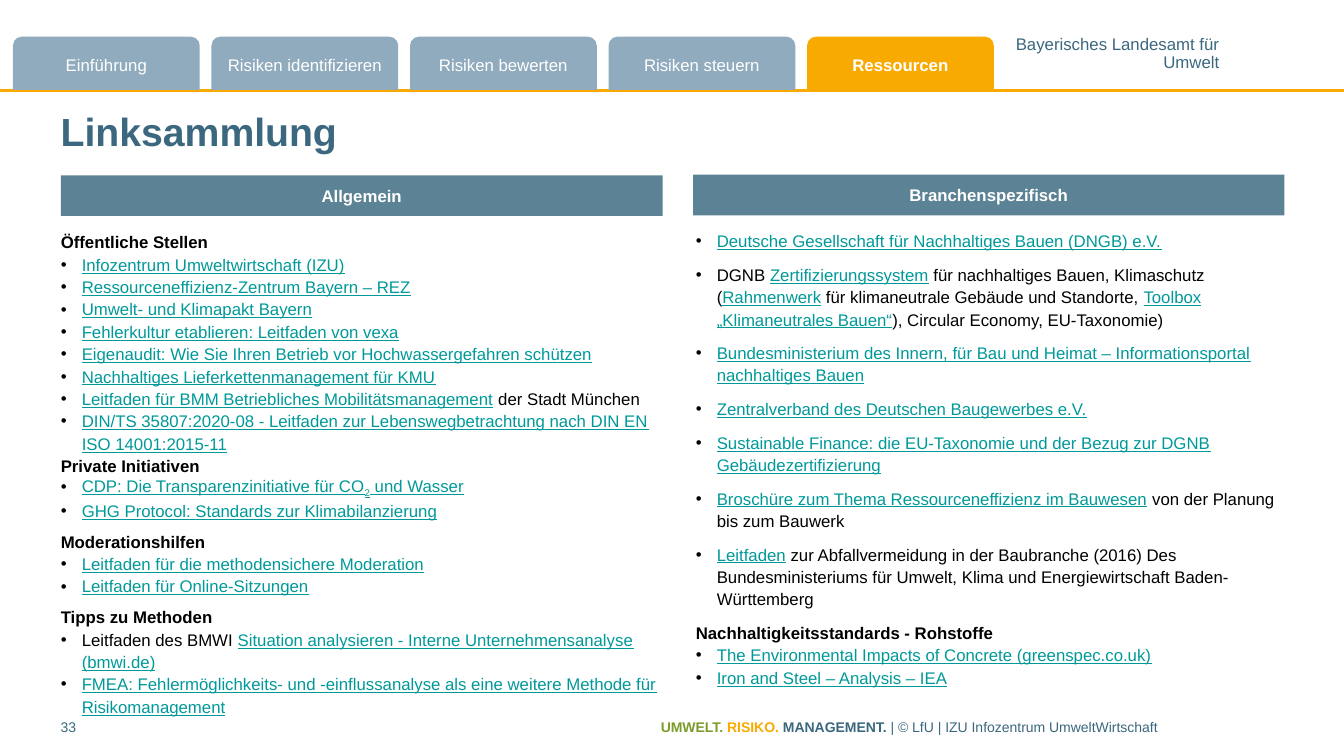
from lxml.etree import SubElement
from pptx import Presentation
from pptx.dml.color import RGBColor
from pptx.enum.shapes import MSO_CONNECTOR, MSO_SHAPE
from pptx.enum.text import MSO_ANCHOR, PP_ALIGN
from pptx.oxml.ns import qn
from pptx.util import Pt

NAVY, STEEL, MIST, AMBER = "3B687F", "5C8395", "90ABBE", "F9AA00"
TEAL, GREEN, BLACK, WHITE = "009999", "7B9C2A", "000000", "FFFFFF"


def color(hex_code):
    return RGBColor.from_string(hex_code)


def head(text, before=0):
    return "head", before, [(text, "bold")]


def item(*runs, before=0):
    """Bulleted entry; a bare string is a link, a tuple names its own style."""
    return "item", before, [(r, "link") if isinstance(r, str) else r for r in runs]


def plain(text):
    return text, "plain"


class Slide:
    font_name = "Arial"
    body_size = 12
    line_height = 16
    indent = 15

    def __init__(self, presentation):
        self.slide = presentation.slides.add_slide(presentation.slide_layouts[6])

    def style(self, run, size, hex_code, bold=False):
        run.font.name = self.font_name
        run.font.size = Pt(size)
        run.font.bold = bold
        run.font.color.rgb = color(hex_code)

    def rule(self, y, width, hex_code, weight):
        line = self.slide.shapes.add_connector(
            MSO_CONNECTOR.STRAIGHT, 0, Pt(y), Pt(width), Pt(y))
        line.line.color.rgb = color(hex_code)
        line.line.width = Pt(weight)
        SubElement(line._element.spPr, qn("a:effectLst"))

    def insets(self, frame, horizontal, vertical):
        frame.margin_left = frame.margin_right = Pt(horizontal)
        frame.margin_top = frame.margin_bottom = Pt(vertical)

    def panel(self, kind, box, fill, label, anchor, inset, bold):
        """Filled shape with a centred white label."""
        shape = self.slide.shapes.add_shape(kind, *map(Pt, box))
        shape.shadow.inherit = False
        shape.fill.solid()
        shape.fill.fore_color.rgb = color(fill)
        shape.line.fill.background()
        frame = shape.text_frame
        self.insets(frame, *inset)
        frame.word_wrap = True
        frame.vertical_anchor = anchor
        frame.text = label
        paragraph = frame.paragraphs[0]
        paragraph.alignment = PP_ALIGN.CENTER
        self.style(paragraph.runs[0], self.body_size, WHITE, bold)

    def frame(self, box, vertical_inset=3.6, wrap=True):
        frame = self.slide.shapes.add_textbox(*map(Pt, box)).text_frame
        self.insets(frame, 0, vertical_inset)
        frame.word_wrap = wrap
        return frame

    def line(self, box, size, *parts, anchor=MSO_ANCHOR.TOP):
        """One line of text from (text, colour, bold) parts."""
        frame = self.frame(box)
        frame.vertical_anchor = anchor
        for text, hex_code, bold in parts:
            run = frame.paragraphs[0].add_run()
            run.text = text
            self.style(run, size, hex_code, bold)

    def sender(self, box, text):
        frame = self.frame(box, 0, wrap=False)
        frame.text = text
        for paragraph in frame.paragraphs:
            paragraph.alignment = PP_ALIGN.RIGHT
            paragraph.line_spacing = 0.85
            self.style(paragraph.runs[0], self.body_size, NAVY)

    def bullet(self, paragraph):
        props = paragraph._p.get_or_add_pPr()
        props.set("marL", str(Pt(self.indent)))
        props.set("indent", str(-Pt(self.indent)))
        bullet_color = SubElement(props, qn("a:buClr"))
        SubElement(bullet_color, qn("a:srgbClr")).set("val", BLACK)
        SubElement(props, qn("a:buFont")).set("typeface", self.font_name)
        SubElement(props, qn("a:buChar")).set("char", "•")

    def link_list(self, box, entries):
        frame = self.frame(box)
        for index, (kind, before, runs) in enumerate(entries):
            paragraph = frame.add_paragraph() if index else frame.paragraphs[0]
            if kind == "item":
                self.bullet(paragraph)
            paragraph.line_spacing = Pt(self.line_height)
            paragraph.space_before = Pt(before)
            for text, look in runs:
                run = paragraph.add_run()
                run.text = text
                is_link = look in ("link", "subscript")
                self.style(run, self.body_size, TEAL if is_link else BLACK, look == "bold")
                run.font.underline = is_link
                if look == "subscript":
                    run._r.get_or_add_rPr().set("baseline", "-25000")


CHAPTERS = ["Einführung", "Risiken identifizieren", "Risiken bewerten",
            "Risiken steuern", "Ressourcen"]
CURRENT_CHAPTER = "Ressourcen"

GENERAL_LINKS = [
    head("Öffentliche Stellen"),
    item("Infozentrum Umweltwirtschaft (IZU)"),
    item("Ressourceneffizienz-Zentrum Bayern – REZ"),
    item("Umwelt- und Klimapakt Bayern"),
    item("Fehlerkultur etablieren: Leitfaden von vexa"),
    item("Eigenaudit: Wie Sie Ihren Betrieb vor Hochwassergefahren schützen"),
    item("Nachhaltiges Lieferkettenmanagement für KMU"),
    item("Leitfaden für BMM Betriebliches Mobilitätsmanagement",
         plain(" der Stadt München")),
    item("DIN/TS 35807:2020-08 - Leitfaden zur Lebenswegbetrachtung nach "
         "DIN EN ISO 14001:2015-11"),
    head("Private Initiativen"),
    item("CDP: Die Transparenzinitiative für CO", ("2", "subscript"), " und Wasser"),
    item("GHG Protocol: Standards zur Klimabilanzierung"),
    head("Moderationshilfen", before=6),
    item("Leitfaden für die methodensichere Moderation"),
    item("Leitfaden für Online-Sitzungen"),
    head("Tipps zu Methoden", before=6),
    item(plain("Leitfaden des BMWI "),
         "Situation analysieren - Interne Unternehmensanalyse (bmwi.de)"),
    item("FMEA: Fehlermöglichkeits- und -einflussanalyse als eine weitere "
         "Methode für Risikomanagement"),
]

SECTOR_LINKS = [
    item("Deutsche Gesellschaft für Nachhaltiges Bauen (DNGB) e.V."),
    item(plain("DGNB "), "Zertifizierungssystem",
         plain(" für nachhaltiges Bauen, Klimaschutz ("), "Rahmenwerk",
         plain(" für klimaneutrale Gebäude und Standorte, "),
         "Toolbox „Klimaneutrales Bauen“",
         plain("), Circular Economy, EU-Taxonomie)"), before=8),
    item("Bundesministerium des Innern, für Bau und Heimat – "
         "Informationsportal nachhaltiges Bauen", before=8),
    item("Zentralverband des Deutschen Baugewerbes e.V.", before=8),
    item("Sustainable Finance: die EU-Taxonomie und der Bezug zur DGNB "
         "Gebäudezertifizierung", before=8),
    item("Broschüre zum Thema Ressourceneffizienz im Bauwesen",
         plain(" von der Planung bis zum Bauwerk"), before=8),
    item("Leitfaden",
         plain(" zur Abfallvermeidung in der Baubranche (2016) Des Bundesministeriums "
               "für Umwelt, Klima und Energiewirtschaft Baden-Württemberg"), before=8),
    head("Nachhaltigkeitsstandards - Rohstoffe", before=8),
    item("The Environmental Impacts of Concrete (greenspec.co.uk)"),
    item("Iron and Steel – Analysis – IEA"),
]


def main():
    presentation = Presentation()
    presentation.slide_width, presentation.slide_height = Pt(960), Pt(540)
    page = Slide(presentation)

    page.rule(64.6, 960, AMBER, 2)
    page.sender((725, 26.6, 146, 24.5), "Bayerisches Landesamt für\nUmwelt")
    for index, chapter in enumerate(CHAPTERS):
        current = chapter == CURRENT_CHAPTER
        page.panel(MSO_SHAPE.ROUND_2_SAME_RECTANGLE,
                   (9.3 + 141.8 * index, 26.2, 133.4, 38),
                   AMBER if current else MIST, chapter,
                   MSO_ANCHOR.MIDDLE, (2.9, 3.6), current)

    page.line((43.4, 73.4, 886, 39.6), 28, ("Linksammlung", NAVY, True),
              anchor=MSO_ANCHOR.MIDDLE)
    for label, box in [("Allgemein", (43.4, 125.2, 430, 29)),
                       ("Branchenspezifisch", (495, 124.8, 422.5, 29))]:
        page.panel(MSO_SHAPE.RECTANGLE, box, STEEL, label,
                   MSO_ANCHOR.TOP, (7.2, 7.2), True)
    page.link_list((43.4, 160.6, 428.4, 344), GENERAL_LINKS)
    page.link_list((497, 159.8, 418.3, 337), SECTOR_LINKS)

    page.line((43.4, 509.8, 50, 22.3), 10, ("33", NAVY, False))
    page.line((472, 509.8, 458, 22.3), 10,
              ("UMWELT. ", GREEN, True), ("RISIKO. ", AMBER, True),
              ("MANAGEMENT. ", NAVY, True),
              ("| © LfU | IZU Infozentrum UmweltWirtschaft", NAVY, False))
    presentation.save("out.pptx")


if __name__ == "__main__":
    main()
